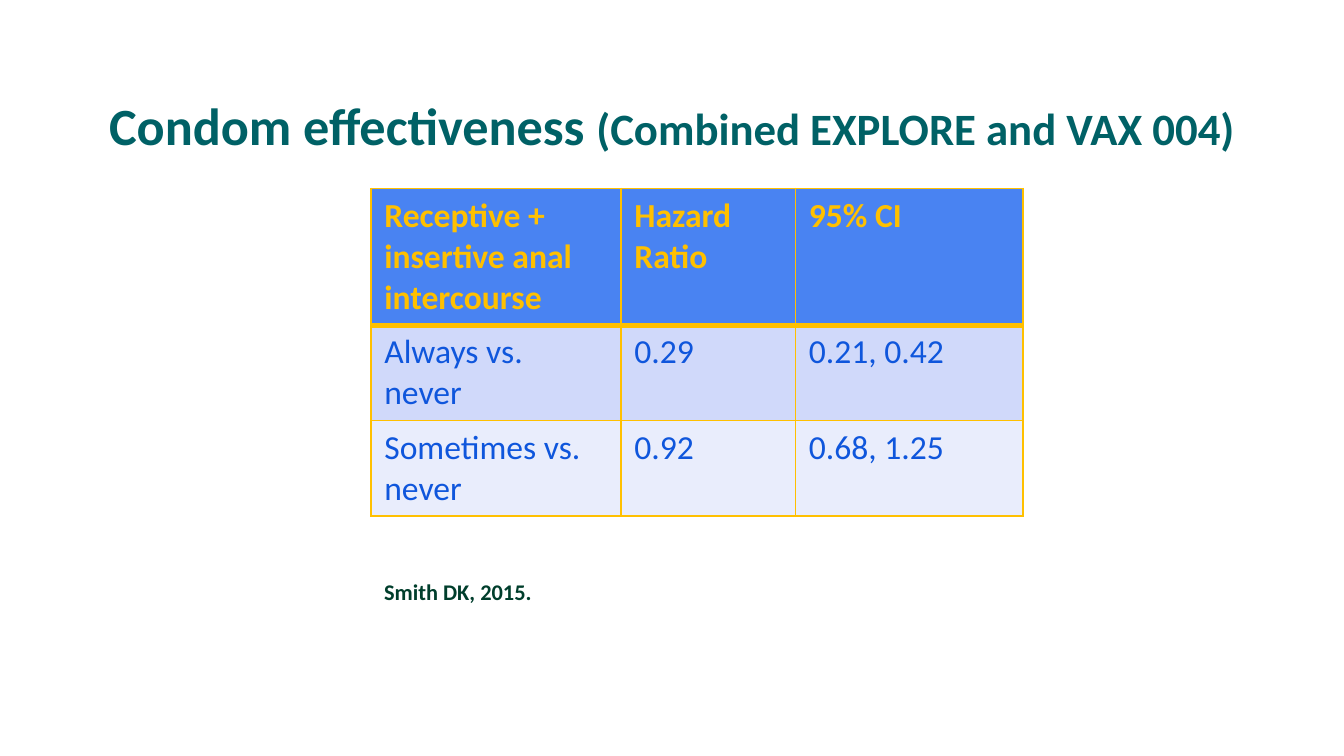
from dataclasses import dataclass

from lxml import etree
from pptx import Presentation
from pptx.dml.color import RGBColor
from pptx.enum.text import MSO_ANCHOR, PP_ALIGN
from pptx.oxml.ns import qn
from pptx.util import Pt

CENTER = PP_ALIGN.CENTER
BOTTOM = MSO_ANCHOR.BOTTOM
TITLE_ONLY = 5


@dataclass(frozen=True)
class Theme:
    font: str = "Calibri"
    title: str = "006166"
    source: str = "003E2C"
    gold: str = "FFC000"
    body: str = "0F56DC"
    header_fill: str = "4983F2"
    row_fills: tuple = ("D0D9FA", "E9EDFC")
    title_size: int = 28
    subtitle_size: int = 24
    table_size: int = 18
    source_size: int = 12
    border: int = 1
    header_rule: int = 3


THEME = Theme()
ROWS = [
    ["Receptive + insertive anal intercourse", "Hazard Ratio", "95% CI"],
    ["Always vs. never", "0.29", "0.21, 0.42"],
    ["Sometimes vs. never", "0.92", "0.68, 1.25"],
]
COL_WIDTHS = [134, 93.5, 122]
ROW_HEIGHTS = [67, 47, 47]


def set_font(font, size, color, bold):
    font.name = THEME.font
    font.size = Pt(size)
    font.bold = bold
    font.color.rgb = RGBColor.from_string(color)


def set_borders(cell, **widths):
    """Draw gold lines; widths maps the sides L, R, T and B to points."""
    tc_pr = cell._tc.get_or_add_tcPr()
    for side, width in widths.items():
        ln = etree.SubElement(tc_pr, qn(f"a:ln{side}"), w=str(Pt(width)))
        fill = etree.SubElement(ln, qn("a:solidFill"))
        etree.SubElement(fill, qn("a:srgbClr"), val=THEME.gold)


def add_title(s, left, top, width, height):
    sp = s.shapes.title
    sp.left, sp.top, sp.width, sp.height = map(Pt, (left, top, width, height))
    tf = sp.text_frame
    tf.vertical_anchor = BOTTOM
    p = tf.paragraphs[0]
    p.alignment = CENTER
    p.line_spacing = Pt(30)
    for text, size in [
        ("Condom effectiveness ", THEME.title_size),
        ("(Combined EXPLORE and VAX 004)", THEME.subtitle_size),
    ]:
        r = p.add_run()
        r.text = text
        set_font(r.font, size, THEME.title, True)


def add_hazard_table(s, left, top):
    frame = s.shapes.add_table(
        len(ROWS), len(COL_WIDTHS), Pt(left), Pt(top),
        Pt(sum(COL_WIDTHS)), Pt(sum(ROW_HEIGHTS)))
    table = frame.table
    for column, width in zip(table.columns, COL_WIDTHS):
        column.width = Pt(width)
    for row, height in zip(table.rows, ROW_HEIGHTS):
        row.height = Pt(height)

    fills = [THEME.header_fill, *THEME.row_fills]
    for i, (texts, fill) in enumerate(zip(ROWS, fills)):
        header = i == 0
        above = THEME.header_rule if i == 1 else THEME.border
        below = THEME.header_rule if header else THEME.border
        for j, text in enumerate(texts):
            cell = table.cell(i, j)
            set_borders(cell, L=THEME.border, R=THEME.border, T=above, B=below)
            cell.fill.solid()
            cell.fill.fore_color.rgb = RGBColor.from_string(fill)
            cell.text = text
            color = THEME.gold if header else THEME.body
            set_font(cell.text_frame.paragraphs[0].font,
                     THEME.table_size, color, header)


def add_source(s, left, top, width, height):
    tf = s.shapes.add_textbox(*map(Pt, (left, top, width, height))).text_frame
    tf.word_wrap = False
    tf.vertical_anchor = BOTTOM
    p = tf.paragraphs[0]
    p.text = "Smith DK, 2015."
    p.line_spacing = 1.5
    set_font(p.font, THEME.source_size, THEME.source, True)


def main():
    prs = Presentation()
    prs.slide_width, prs.slide_height = Pt(720), Pt(405)
    s = prs.slides.add_slide(prs.slide_layouts[TITLE_ONLY])
    add_title(s, 0, 19.5, 720, 67.5)
    add_hazard_table(s, 198.7, 101)
    add_source(s, 198.7, 296.6, 94.5, 31)
    prs.save("out.pptx")


if __name__ == "__main__":
    main()
